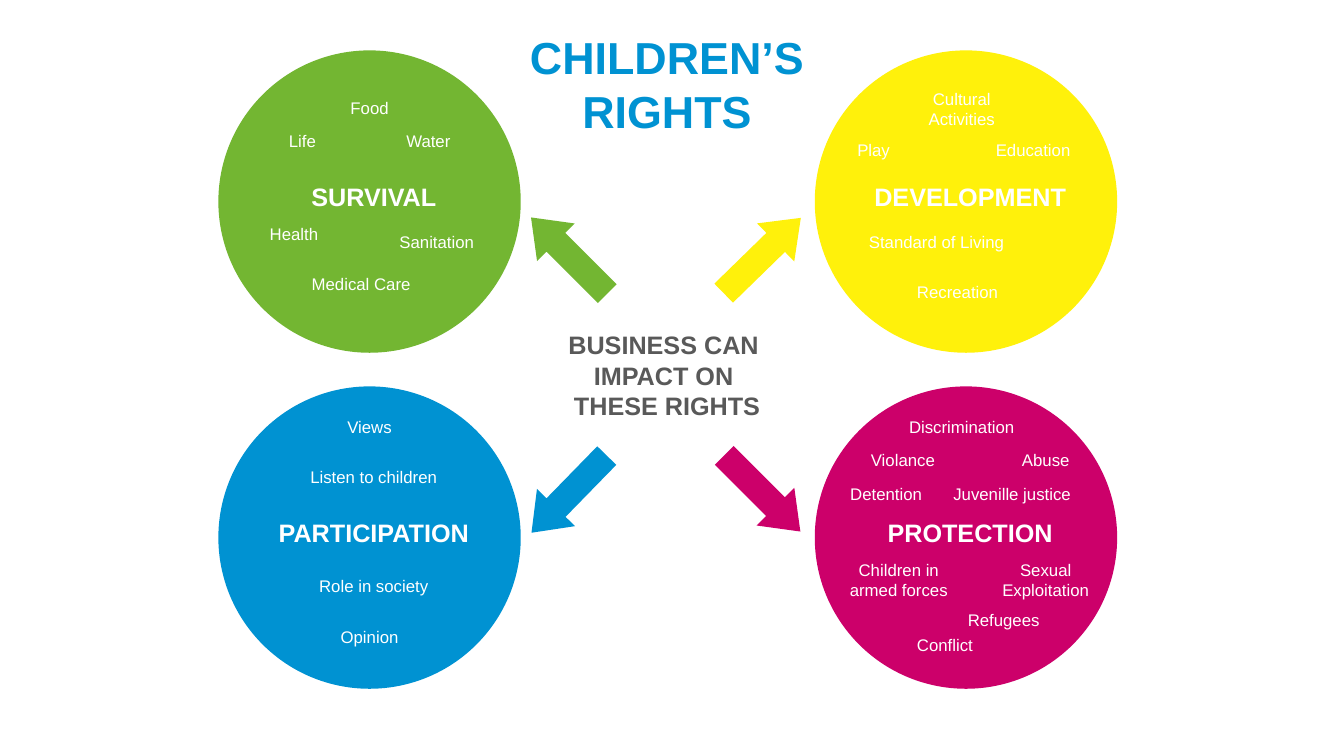
"""Build the slide on children's rights and the impact of business on them."""
import pptx
import pptx.dml.color
import pptx.enum.shapes
import pptx.enum.text
import pptx.util

Pt = pptx.util.Pt
Kind = pptx.enum.shapes.MSO_SHAPE

CIRCLE_SIZE = 216
ARROW_SIZE = (77, 38)

RIGHTS = [
    ("PARTICIPATION", "0092D2", (156, 276), (368, 334, 134.3), [
        ("Views", 228, 294, 72, 30),
        ("Listen to children", 198, 330, 138, 24),
        ("Role in society", 198, 408, 138, 24),
        ("Opinion", 228, 444, 72, 30),
    ]),
    ("PROTECTION", "CC006A", (582, 276), (506, 333.5, 45), [
        ("Discrimination", 636, 294, 102, 24),
        ("Violance", 594, 318, 102, 24),
        ("Abuse", 708, 318, 78, 24),
        ("Detention", 594, 342, 78, 24),
        ("Juvenille justice", 666, 342, 114, 24),
        ("Children in armed forces", 594, 396, 96, 30),
        ("Sexual Exploitation", 696, 396, 102, 36),
        ("Refugees", 678, 432, 78, 24),
        ("Conflict", 636, 450, 78, 24),
    ]),
    ("DEVELOPMENT", "FFF10B", (582, 36), (506, 163.5, 315.7), [
        ("Cultural Activities", 642, 60, 90, 48),
        ("Play", 594, 96, 60, 30),
        ("Education", 696, 96, 84, 30),
        ("Standard of Living", 600, 162, 138, 24),
        ("Recreation", 636, 198, 96, 30),
    ]),
    ("SURVIVAL", "73B632", (156, 36), (368, 163.5, 225), [
        ("Food", 234, 66, 60, 30),
        ("Life", 186, 90, 60, 30),
        ("Water", 276, 90, 60, 30),
        ("Health", 168, 156, 84, 30),
        ("Sanitation", 270, 162, 84, 30),
        ("Medical Care", 204, 192, 108, 24),
    ]),
]


def rgb(value):
    return pptx.dml.color.RGBColor.from_string(value)


def write(frame, text, size=12, color="FFFFFF", bold=False, font="Arial"):
    frame.word_wrap = True
    paragraph = frame.paragraphs[0]
    paragraph.text = text
    paragraph.alignment = pptx.enum.text.PP_ALIGN.CENTER
    for run in paragraph.runs:
        run.font.name = font
        run.font.size = Pt(size)
        run.font.bold = bold
        run.font.color.rgb = rgb(color)


class RightsSlide:
    heading = {"size": 18, "bold": True}

    def __init__(self, deck):
        self.slide = deck.slides.add_slide(deck.slide_layouts[6])

    def shape(self, kind, color, *box):
        shape = self.slide.shapes.add_shape(kind, *map(Pt, box))
        shape.shadow.inherit = False
        shape.fill.solid()
        shape.fill.fore_color.rgb = rgb(color)
        shape.line.fill.background()
        return shape

    def circle(self, color, left, top):
        self.shape(Kind.OVAL, color, left, top, CIRCLE_SIZE, CIRCLE_SIZE)

    def arrow(self, color, left, top, rotation):
        arrow = self.shape(Kind.RIGHT_ARROW, color, left, top, *ARROW_SIZE)
        arrow.rotation = rotation
        arrow.adjustments[1] = 0.66

    def label(self, text, *box, **style):
        frame = self.slide.shapes.add_textbox(*map(Pt, box)).text_frame
        write(frame, text, **style)
        return frame


def main():
    deck = pptx.Presentation()
    deck.slide_width, deck.slide_height = Pt(960), Pt(540)
    page = RightsSlide(deck)

    for name, color, corner, arrow, examples in RIGHTS:
        left, top = corner
        page.circle(color, left, top)
        page.label(name, left + 12, top + 90, 198, 36, **page.heading)
        for example in examples:
            page.label(*example)
        page.arrow(color, *arrow)

    title = page.label("CHILDREN’S RIGHTS", 378, 18, 204, 90,
                       size=32, color="0092D2", bold=True)
    title.margin_left = title.margin_bottom = 0
    page.label("BUSINESS CAN \vIMPACT ON \vTHESE RIGHTS", 354, 232, 245, 72,
               color="595959", **page.heading)

    deck.save("out.pptx")


if __name__ == "__main__":
    main()
